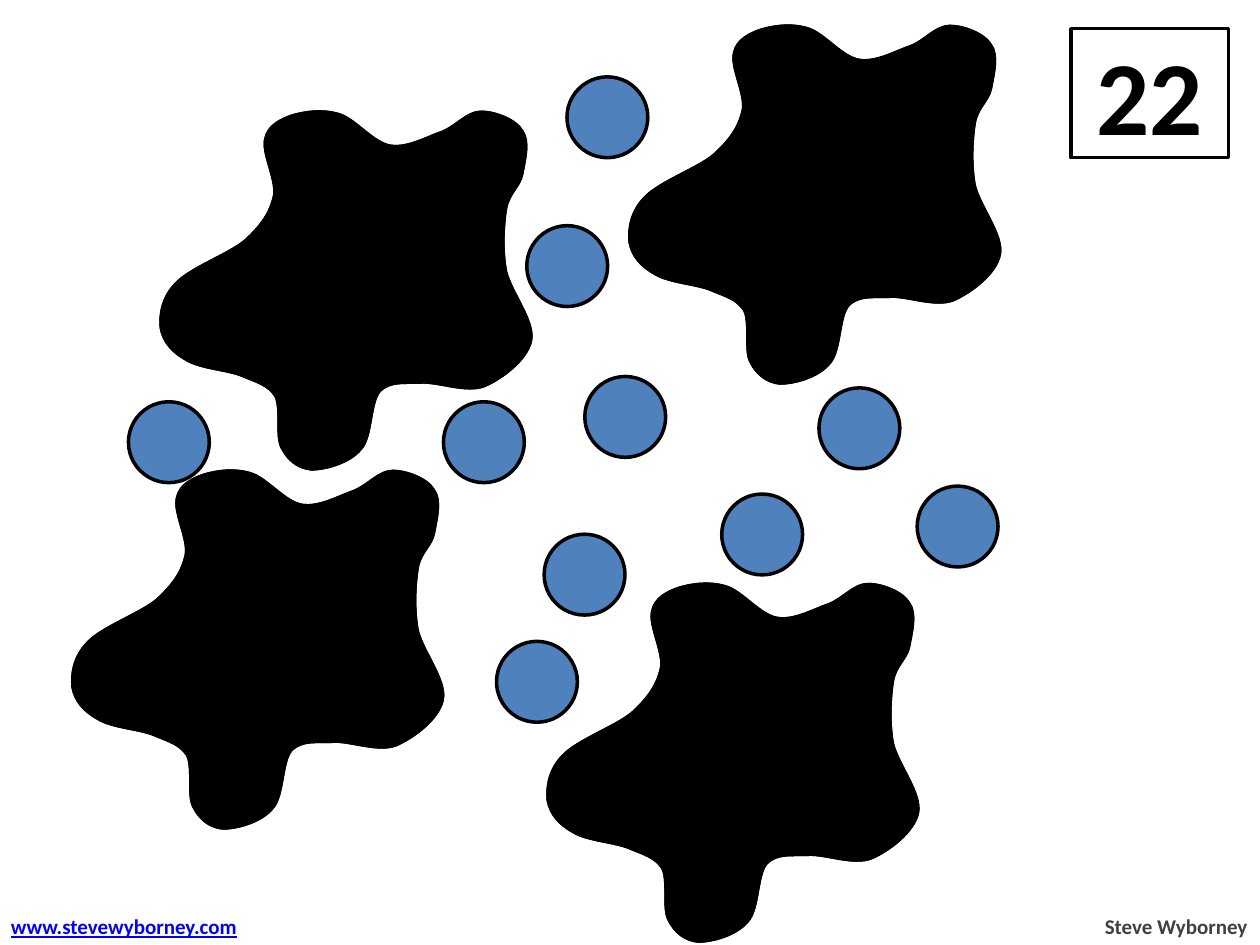
from typing import NamedTuple

from lxml import etree
from pptx import Presentation
from pptx import util as u
from pptx.dml.color import RGBColor
from pptx.enum import shapes, text
from pptx.oxml.ns import qn

BLACK = RGBColor(0, 0, 0)
WHITE = RGBColor(255, 255, 255)
BLUE = RGBColor(0x4F, 0x81, 0xBD)
GREY = RGBColor(0x40, 0x40, 0x40)
LINK = RGBColor(0, 0, 255)
SIZE = 1.63


class Spot(NamedTuple):
    x: float
    y: float


class Note(NamedTuple):
    words: str
    x: float
    width: float
    align: int
    look: dict


DOTS = [Spot(*p) for p in (
    (5.89, 3.3), (2.59, 8.1), (7.01, 12.67), (8.94, 8.1), (5.72, 7.54),
    (15.93, 14.55), (10.62, 4.55), (12.24, 14.86), (4.83, 10.41),
    (16.51, 7.82), (14.78, 2.57), (13.82, 12.62), (10.01, 12.93),
    (11.79, 7.59), (17.63, 3.86), (8.2, 4.93), (10.97, 10.77),
    (14.55, 9.96), (15.11, 5), (18.49, 9.8), (11.43, 1.55), (2.64, 12.73))]

BLOTS = [Spot(3.38, 2.06), Spot(1.6, 9.3), Spot(11.18, 11.58),
         Spot(12.83, 0.33)]

# Blot outline in inches: a start, then three points for each curve
START = (1.48, 2.85)
CURVES = [
    ((1.37, 2.79), (1.3, 2.71), (1.28, 2.6)),
    ((1.27, 2.5), (1.29, 2.36), (1.4, 2.25)),
    ((1.51, 2.13), (1.82, 2.02), (1.95, 1.91)),
    ((2.08, 1.79), (2.15, 1.69), (2.18, 1.55)),
    ((2.2, 1.42), (2.08, 1.21), (2.11, 1.1)),
    ((2.13, 1), (2.23, 0.95), (2.32, 0.92)),
    ((2.42, 0.89), (2.56, 0.87), (2.69, 0.91)),
    ((2.82, 0.95), (2.96, 1.14), (3.1, 1.16)),
    ((3.24, 1.18), (3.39, 1.09), (3.51, 1.05)),
    ((3.63, 1), (3.71, 0.89), (3.82, 0.89)),
    ((3.92, 0.89), (4.09, 0.95), (4.14, 1.04)),
    ((4.2, 1.12), (4.16, 1.27), (4.14, 1.38)),
    ((4.12, 1.48), (4.03, 1.53), (4.01, 1.66)),
    ((3.99, 1.79), (3.98, 1.98), (4.01, 2.15)),
    ((4.05, 2.32), (4.24, 2.55), (4.21, 2.7)),
    ((4.18, 2.85), (3.98, 3), (3.84, 3.06)),
    ((3.7, 3.11), (3.5, 3.03), (3.36, 3.03)),
    ((3.22, 3.04), (3.1, 3.01), (3.01, 3.1)),
    ((2.93, 3.19), (2.95, 3.46), (2.86, 3.56)),
    ((2.77, 3.67), (2.58, 3.72), (2.47, 3.72)),
    ((2.37, 3.71), (2.29, 3.65), (2.24, 3.55)),
    ((2.19, 3.46), (2.24, 3.24), (2.19, 3.14)),
    ((2.13, 3.05), (2.05, 3.03), (1.93, 2.98)),
    ((1.82, 2.93), (1.59, 2.92), START)]

NOTES = [
    Note("Steve Wyborney", 22, 3.4, text.PP_ALIGN.RIGHT, {"color": GREY}),
    Note("www.stevewyborney.com", -0.03, 5.21, text.PP_ALIGN.LEFT,
         {"color": LINK, "underline": True})]


def paint(shape, fill: RGBColor) -> None:
    shape.shadow.inherit = False
    shape.fill.solid()
    shape.fill.fore_color.rgb = fill
    shape.line.color.rgb = BLACK
    shape.line.width = u.Pt(2)


def write(frame, words: str, align: int, size: int, look: dict) -> None:
    para = frame.paragraphs[0]
    para.alignment = align
    run = para.add_run()
    run.text = words
    form = {"name": "Calibri", "size": u.Pt(size), "bold": True, **look}
    run.font.color.rgb = form.pop("color")
    for key, val in form.items():
        setattr(run.font, key, val)


def turn(point: tuple) -> tuple:
    """Quarter turn, in EMU, that the shape's own rotation undoes."""
    x, y = point
    return -u.Inches(y), u.Inches(x)


def blot(slide, spot: Spot, alpha: int) -> None:
    pen = slide.shapes.build_freeform(*turn(START))
    pen.add_line_segments([turn(p) for c in CURVES for p in c])
    shape = pen.convert_to_shape()
    shape.left, shape.top = u.Cm(spot.x), u.Cm(spot.y)
    shape.rotation = 270
    paint(shape, BLACK)
    # Every three straight steps become one curve
    steps = shape.element.xpath(".//a:lnTo")
    for i in range(0, len(steps), 3):
        curve = etree.Element(qn("a:cubicBezTo"))
        steps[i].addprevious(curve)
        for step in steps[i:i + 3]:
            curve.append(step[0])
            step.getparent().remove(step)
    if alpha < 100:
        tint = shape.element.xpath("./p:spPr/a:solidFill/a:srgbClr")[0]
        etree.SubElement(tint, qn("a:alpha"), val=str(alpha * 1000))


def main() -> None:
    deck = Presentation()
    deck.slide_width, deck.slide_height = u.Cm(25.4), u.Cm(19.05)
    slide = deck.slides.add_slide(deck.slide_layouts[6])

    # Dots
    group = slide.shapes.add_group_shape()
    for dot in DOTS:
        paint(group.shapes.add_shape(
            shapes.MSO_SHAPE.OVAL, u.Cm(dot.x), u.Cm(dot.y),
            u.Cm(SIZE), u.Cm(SIZE)), BLUE)

    # Total
    box = slide.shapes.add_shape(
        shapes.MSO_SHAPE.RECTANGLE, u.Cm(21.59), u.Cm(0.58),
        u.Cm(3.18), u.Cm(2.6))
    paint(box, WHITE)
    box.text_frame.vertical_anchor = text.MSO_ANCHOR.MIDDLE
    write(box.text_frame, "22", text.PP_ALIGN.CENTER, 60, {"color": BLACK})

    # Footer
    for note in NOTES:
        frame = slide.shapes.add_textbox(
            u.Cm(note.x), u.Cm(18.29), u.Cm(note.width),
            u.Cm(0.76)).text_frame
        frame.word_wrap = False
        frame.auto_size = text.MSO_AUTO_SIZE.SHAPE_TO_FIT_TEXT
        write(frame, note.words, note.align, 12, note.look)

    # Blots, each a solid one under a sheer one
    for spot in BLOTS:
        for alpha in (100, 40):
            blot(slide, spot, alpha)

    deck.save("out.pptx")


if __name__ == "__main__":
    main()
